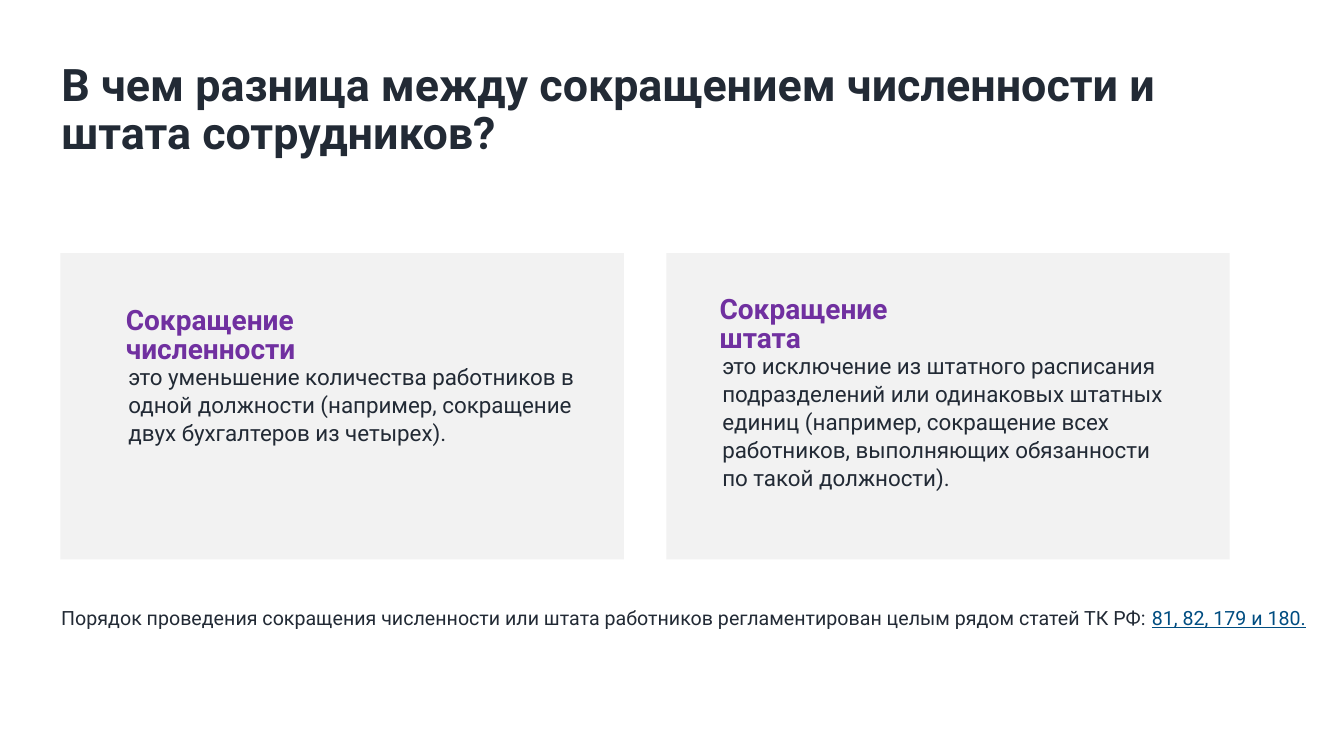
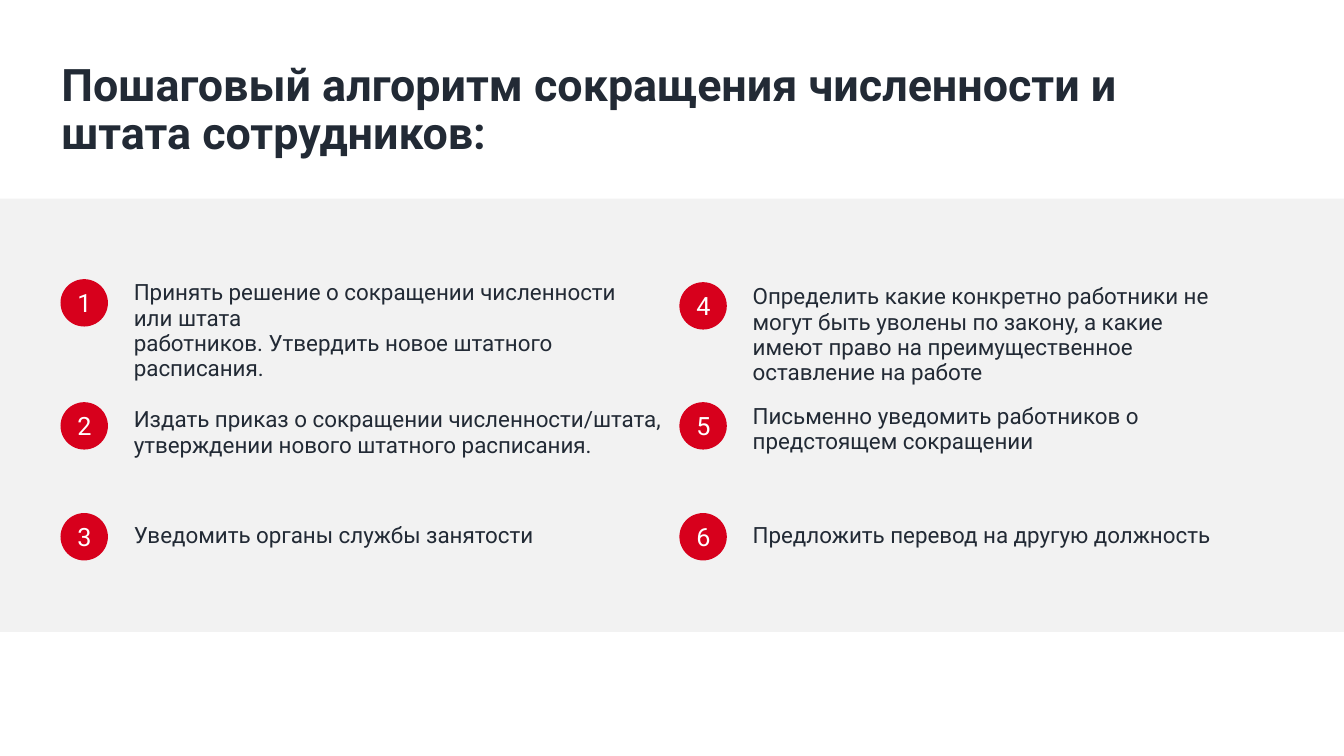
from dataclasses import dataclass

from pptx import Presentation
from pptx.dml.color import RGBColor
from pptx.enum.shapes import MSO_SHAPE as Preset
from pptx.enum.text import MSO_ANCHOR as Anchor, MSO_AUTO_SIZE as AutoSize, PP_ALIGN as Align
from pptx.shapes.autoshape import Shape
from pptx.slide import Slide
from pptx.util import Inches, Length, Pt

FONT = "Roboto"
INK = RGBColor(0x22, 0x2A, 0x35)
PANEL = RGBColor(0xF2, 0xF2, 0xF2)
PURPLE = RGBColor(0x70, 0x30, 0xA0)
RED = RGBColor(0xD7, 0x00, 0x1C)
LINK_BLUE = RGBColor(0x00, 0x4D, 0x81)
WHITE = RGBColor(0xFF, 0xFF, 0xFF)

SLIDE_WIDTH, SLIDE_HEIGHT = Inches(13.33), Inches(7.5)
TITLE_ONLY = 5
# Places are (left, top, width, height) on a grid of 100 columns by 100 rows.
GRID = 100
Place = tuple[float, float, float, float]

TEXT_LEFT = 3.82
PANEL_LEFT = 4.5
TITLE_PLACE: Place = (TEXT_LEFT, 7.6, 89.85, 14.67)


@dataclass(frozen=True)
class TextStyle:
    size: int
    color: RGBColor = INK
    bold: bool = False
    leading: Length | float | None = None
    align: Align = Align.LEFT


TITLE = TextStyle(32, bold=True, leading=0.9)
HEADING = TextStyle(20, PURPLE, bold=True, leading=Pt(21))
DEFINITION = TextStyle(16, leading=Pt(20))
FOOTNOTE = TextStyle(14)
STEP = TextStyle(16, leading=Pt(18))
BADGE = TextStyle(18, WHITE, align=Align.CENTER)


@dataclass(frozen=True)
class Card:
    left: float
    inset_x: float
    inset_y: float
    heading: str
    definition: str


@dataclass(frozen=True)
class Step:
    number: int
    column: int
    top: float
    text_drop: float
    text_width: float
    lines: tuple[str, ...]


CARD_TOP, CARD_WIDTH, CARD_HEIGHT = 33.47, 41.92, 40.53
CARDS = (
    Card(PANEL_LEFT, 4.12, 6.4, "Сокращение численности",
         "это уменьшение количества работников в одной должности "
         "(например, сокращение двух бухгалтеров из четырех)."),
    Card(49.58, 3.22, 4.93, "Сокращение штата",
         "это исключение из штатного расписания подразделений или одинаковых "
         "штатных единиц (например, сокращение всех работников, выполняющих "
         "обязанности по такой должности)."),
)

STEP_COLUMNS = (PANEL_LEFT, 50.55)
STEP_TEXT_OFFSET = 4.72
STEP_TEXT_HEIGHT = 8
BADGE_WIDTH, BADGE_HEIGHT = 3.53, 6.27
STEPS = (
    Step(1, 0, 36.93, -0.53, 38.7,
         ("Принять решение о сокращении численности или штата",
          "работников. Утвердить новое штатного расписания.")),
    Step(2, 0, 53.2, 0, 41.25,
         ("Издать приказ о сокращении численности/штата, "
          "утверждении нового штатного расписания.",)),
    Step(3, 0, 67.87, 0.67, 36.08, ("Уведомить органы службы занятости",)),
    Step(4, 1, 37.33, -0.4, 36.08,
         ("Определить какие конкретно работники не могут быть уволены по закону, "
          "а какие имеют право на преимущественное оставление на работе",)),
    Step(5, 1, 53.2, -0.4, 36.08,
         ("Письменно уведомить работников о предстоящем сокращении",)),
    Step(6, 1, 67.87, 0.67, 36.08, ("Предложить перевод на другую должность",)),
)


def on_grid(place: Place) -> tuple[int, int, int, int]:
    """Turn grid columns and rows into slide lengths."""
    left, top, width, height = place
    return (round(left * SLIDE_WIDTH / GRID), round(top * SLIDE_HEIGHT / GRID),
            round(width * SLIDE_WIDTH / GRID), round(height * SLIDE_HEIGHT / GRID))


def write(shape: Shape, lines: tuple[str, ...], style: TextStyle,
          anchor: Anchor = Anchor.TOP) -> None:
    frame = shape.text_frame
    frame.text = "\n".join(lines)
    frame.word_wrap = True
    frame.auto_size = AutoSize.NONE
    frame.vertical_anchor = anchor
    for paragraph in frame.paragraphs:
        paragraph.alignment = style.align
        paragraph.line_spacing = style.leading
        font = paragraph.font
        font.name, font.size, font.bold = FONT, Pt(style.size), style.bold
        font.color.rgb = style.color


def add_text(slide: Slide, place: Place, lines: tuple[str, ...], style: TextStyle) -> Shape:
    box = slide.shapes.add_textbox(*on_grid(place))
    write(box, lines, style)
    return box


def add_filled(slide: Slide, preset: Preset, place: Place, color: RGBColor) -> Shape:
    shape = slide.shapes.add_shape(preset, *on_grid(place))
    shape.shadow.inherit = False
    shape.fill.solid()
    shape.fill.fore_color.rgb = color
    shape.line.fill.background()
    return shape


def add_titled_slide(deck: Presentation, heading: str) -> Slide:
    slide = deck.slides.add_slide(deck.slide_layouts[TITLE_ONLY])
    title = slide.shapes.title
    title.left, title.top, title.width, title.height = on_grid(TITLE_PLACE)
    write(title, (heading,), TITLE)
    return slide


def add_card(slide: Slide, card: Card) -> None:
    add_filled(slide, Preset.RECTANGLE,
               (card.left, CARD_TOP, CARD_WIDTH, CARD_HEIGHT), PANEL)
    left, top = card.left + card.inset_x, CARD_TOP + card.inset_y
    add_text(slide, (left, top, 16.5, 8), (card.heading,), HEADING)
    add_text(slide, (left + 0.2, top + 7.33, 35.25, 25), (card.definition,), DEFINITION)


def add_step(slide: Slide, step: Step) -> None:
    left = STEP_COLUMNS[step.column]
    badge = add_filled(slide, Preset.OVAL,
                       (left, step.top, BADGE_WIDTH, BADGE_HEIGHT), RED)
    write(badge, (str(step.number),), BADGE, Anchor.MIDDLE)
    add_text(slide, (left + STEP_TEXT_OFFSET, step.top + step.text_drop,
                     step.text_width, STEP_TEXT_HEIGHT), step.lines, STEP)


def build_difference(deck: Presentation) -> None:
    slide = add_titled_slide(
        deck, "В чем разница между сокращением численности и штата сотрудников?")
    for card in CARDS:
        add_card(slide, card)
    footnote = add_text(
        slide, (TEXT_LEFT, 79.47, 96, 4.53),
        ("Порядок проведения сокращения численности или штата работников "
         "регламентирован целым рядом статей ТК РФ: ",), FOOTNOTE)
    articles = footnote.text_frame.paragraphs[0].add_run()
    articles.text = "81, 82, 179 и 180."
    articles.font.underline = True
    articles.font.color.rgb = LINK_BLUE


def build_algorithm(deck: Presentation) -> None:
    slide = add_titled_slide(
        deck, "Пошаговый алгоритм сокращения численности и штата сотрудников:")
    add_filled(slide, Preset.RECTANGLE, (0, 26.27, GRID, 57.33), PANEL)
    for step in STEPS:
        add_step(slide, step)


def main() -> None:
    deck = Presentation()
    deck.slide_width, deck.slide_height = SLIDE_WIDTH, SLIDE_HEIGHT
    build_difference(deck)
    build_algorithm(deck)
    deck.save("out.pptx")


if __name__ == "__main__":
    main()
